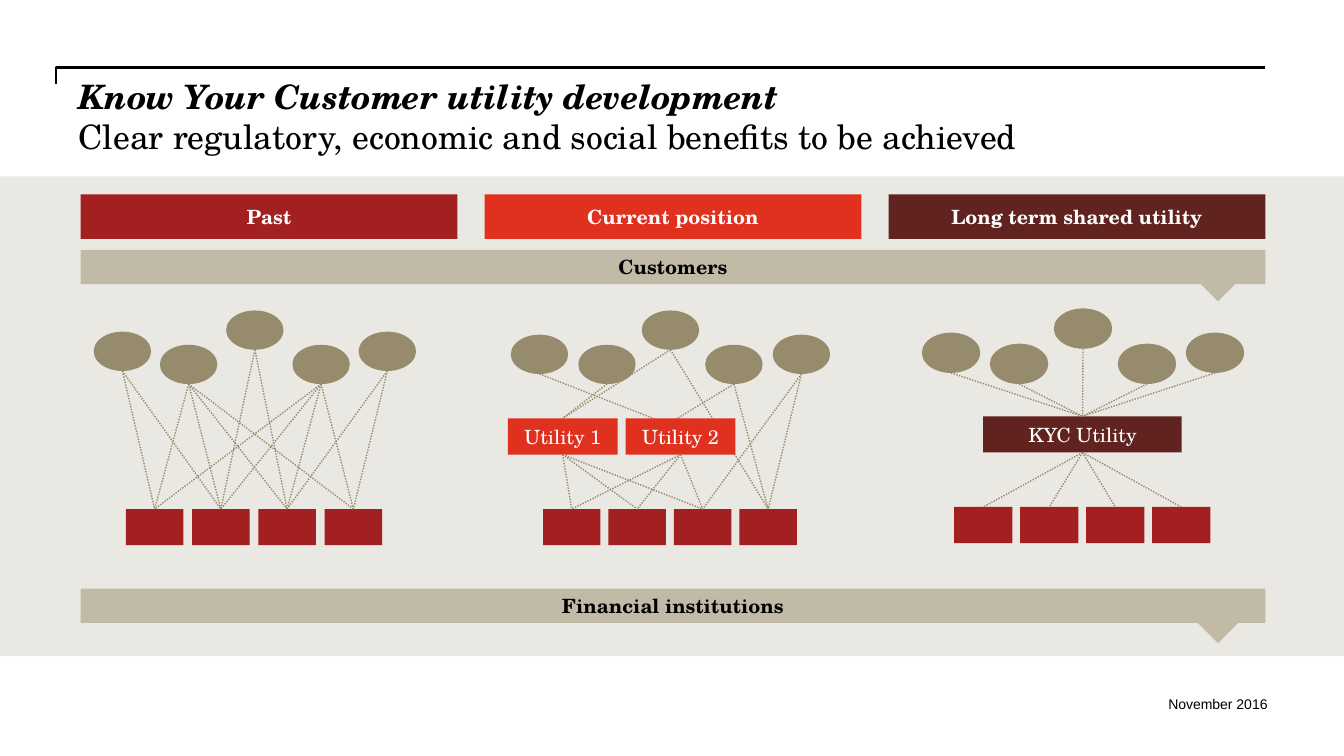
import pptx
import pptx.util
import pptx.dml.color
import pptx.enum.dml
import pptx.enum.shapes
import pptx.enum.text
import pptx.oxml

Inches = pptx.util.Inches
SHAPES = pptx.enum.shapes.MSO_SHAPE
ALIGN = pptx.enum.text.PP_ALIGN
ANCHOR = pptx.enum.text.MSO_ANCHOR
SERIF = "TeX Gyre Schola"
TOP, BOTTOM = 0, 2

COLOURS = {
    "black": "000000",
    "white": "FFFFFF",
    "backdrop": "EAE8E2",
    "past": "A32020",
    "current": "E0301E",
    "future": "602320",
    "banner": "C0BAA7",
    "customer": "968C6D",
}

HEADINGS = [
    ("Past", "past"),
    ("Current position", "current"),
    ("Long term shared utility", "future"),
]

PANELS = [
    {
        "box": (0.93, 3.08, 3.2, 2.33), "oval": (0.57, 0.39), "drops": (0.21, 0.34, 0), "inset": 0,
        "direct": [(0, 0), (0, 1), (1, 0), (1, 1), (1, 2), (1, 3), (2, 1), (2, 2),
                   (3, 0), (3, 1), (3, 2), (3, 3), (4, 2), (4, 3)],
        "tucked": [], "utilities": [], "served": [], "serving": [],
    },
    {
        "box": (5.07, 3.08, 3.17, 2.33), "oval": (0.57, 0.39), "drops": (0.24, 0.34, 0), "inset": 0.02,
        "direct": [(2, 3), (3, 3), (4, 2), (4, 3)],
        "tucked": [(0, 1.54, 1.12), (3, 1.54, 1.14)],
        "utilities": [("Utility 1", -0.03, 1.09, "current"), ("Utility 2", 1.14, 1.09, "current")],
        "served": [(1, 0), (2, 0)],
        "serving": [(0, 0), (0, 1), (0, 2), (1, 0), (1, 1), (1, 2)],
    },
    {
        "box": (9.15, 3.06, 3.2, 2.33), "oval": (0.58, 0.4), "drops": (0.24, 0.35, 0), "inset": 0.02,
        "direct": [], "tucked": [],
        "utilities": [("KYC Utility", 0.61, 1.97, "future")],
        "served": [(customer, 0) for customer in range(5)],
        "serving": [(0, bank) for bank in range(4)],
    },
]


def colour(name):
    """Return the named colour."""
    return pptx.dml.color.RGBColor.from_string(COLOURS[name])


def style_text(para, size, ink, font=SERIF, bold=False, italic=False):
    """Format every run of a paragraph."""
    for span in para.runs:
        span.font.name = font
        span.font.size = pptx.util.Pt(size)
        span.font.bold = bold
        span.font.italic = italic
        span.font.color.rgb = colour(ink)


def add_block(page, box, fill, kind=SHAPES.RECTANGLE, text="", ink="white", bold=False):
    """Add a flat filled shape with an optional centred label."""
    block = page.shapes.add_shape(kind, *map(Inches, box))
    block.shadow.inherit = False
    block.fill.solid()
    block.fill.fore_color.rgb = colour(fill)
    block.line.fill.background()
    if text:
        frame = block.text_frame
        frame.margin_left = frame.margin_right = frame.margin_top = frame.margin_bottom = 0
        frame.vertical_anchor = ANCHOR.MIDDLE
        frame.text = text
        frame.paragraphs[0].alignment = ALIGN.CENTER
        style_text(frame.paragraphs[0], 14, ink, bold=bold)
    return block


def add_text_box(page, box, text):
    """Add a wrapping text box without margins and return its frame."""
    frame = page.shapes.add_textbox(*map(Inches, box)).text_frame
    frame.word_wrap = True
    frame.margin_left = frame.margin_right = frame.margin_top = frame.margin_bottom = 0
    frame.text = text
    return frame


def add_link(page, start, end):
    """Add a dotted line between two points."""
    link = page.shapes.add_connector(pptx.enum.shapes.MSO_CONNECTOR.STRAIGHT, *start, *end)
    link.line.color.rgb = colour("customer")
    link.line.width = pptx.util.Pt(1)
    link.line.dash_style = pptx.enum.dml.MSO_LINE.ROUND_DOT
    link._element.spPr.append(pptx.oxml.parse_xml(
        '<a:effectLst xmlns:a="http://schemas.openxmlformats.org/drawingml/2006/main"/>'))
    return link


def side_middle(block, side):
    """Return the middle of the top or bottom edge of a shape."""
    return block.left + block.width // 2, block.top + (block.height if side == BOTTOM else 0)


def link_down(page, upper, lower):
    """Link the bottom of one shape to the top of a rectangle."""
    link = add_link(page, side_middle(upper, BOTTOM), side_middle(lower, TOP))
    if upper.auto_shape_type == SHAPES.RECTANGLE:
        link.begin_connect(upper, BOTTOM)
    link.end_connect(lower, TOP)


def add_title(page, box):
    """Add the corner rule and the two title lines."""
    left, top, width, height = box
    corner = page.shapes.build_freeform(Inches(left), Inches(top + 0.16))
    corner.add_line_segments(
        [(Inches(left), Inches(top)), (Inches(left + width), Inches(top))], close=False)
    rule = corner.convert_to_shape()
    rule.shadow.inherit = False
    rule.fill.background()
    rule.line.color.rgb = colour("black")
    rule.line.width = pptx.util.Pt(1.5)
    frame = add_text_box(
        page, (left + 0.22, top + 0.08, width - 0.22, height - 0.08),
        "Know Your Customer utility development\n"
        "Clear regulatory, economic and social benefits to be achieved")
    for para, strong in zip(frame.paragraphs, (True, False)):
        style_text(para, 24, "black", bold=strong, italic=strong)


def add_headings(page, box):
    """Spread the three stage headings evenly across the box."""
    left, top, width, height = box
    block_width = 3.74
    step = (width - block_width) / (len(HEADINGS) - 1)
    for index, (text, fill) in enumerate(HEADINGS):
        add_block(page, (left + index * step, top, block_width, height), fill, text=text, bold=True)


def add_banner(page, box, text, overlap):
    """Add a full-width banner with a pointer below its right end."""
    left, top, width, height = box
    add_block(page, box, "banner", text=text, ink="black", bold=True)
    pointer = add_block(
        page, (left + width - 0.67, top + height - overlap, 0.4, 0.2), "banner",
        SHAPES.ISOSCELES_TRIANGLE)
    pointer.rotation = 180


def add_panel(page, panel):
    """Draw customers above, institutions below and the links between them."""
    left, top, width, height = panel["box"]
    oval_width, oval_height = panel["oval"]
    outer, inner, middle = panel["drops"]
    inset = panel["inset"]
    step = (width - oval_width) / 4
    customers = [
        add_block(page, (left + index * step + shift, top + drop, oval_width, oval_height),
                  "customer", SHAPES.OVAL)
        for index, (shift, drop) in enumerate(
            [(0, outer), (inset, inner), (0, middle), (-inset, inner), (0, outer)])
    ]
    banks = [
        add_block(page, (left + 0.32 + index * step, top + height - 0.36, oval_width, 0.36), "past")
        for index in range(4)
    ]
    for customer, bank in panel["direct"]:
        link_down(page, customers[customer], banks[bank])
    for customer, across, down in panel["tucked"]:
        add_link(page, side_middle(customers[customer], BOTTOM),
                 (Inches(left + across), Inches(top + down)))
    utilities = [
        add_block(page, (left + across, top + 1.07, hub_width, 0.36), fill, text=text)
        for text, across, hub_width, fill in panel["utilities"]
    ]
    for customer, utility in panel["served"]:
        link_down(page, customers[customer], utilities[utility])
    for utility, bank in panel["serving"]:
        link_down(page, utilities[utility], banks[bank])


def add_date(page, box):
    """Add the right-aligned date."""
    para = add_text_box(page, box, "November 2016").paragraphs[0]
    para.alignment = ALIGN.RIGHT
    style_text(para, 10, "black", font="Arial")


def main():
    """Build and save the slide."""
    deck = pptx.Presentation()
    deck.slide_width, deck.slide_height = Inches(13.34), Inches(7.5)
    page = deck.slides.add_slide(deck.slide_layouts[6])
    add_block(page, (0, 1.75, 13.34, 4.76), "backdrop")
    add_title(page, (0.56, 0.67, 12, 1.08))
    add_headings(page, (0.8, 1.93, 11.76, 0.44))
    add_banner(page, (0.8, 2.48, 11.76, 0.34), "Customers", 0.03)
    for panel in PANELS:
        add_panel(page, panel)
    add_banner(page, (0.8, 5.84, 11.76, 0.34), "Financial institutions", 0)
    add_date(page, (11.16, 6.9, 1.42, 0.39))
    deck.save("out.pptx")


if __name__ == "__main__":
    main()
